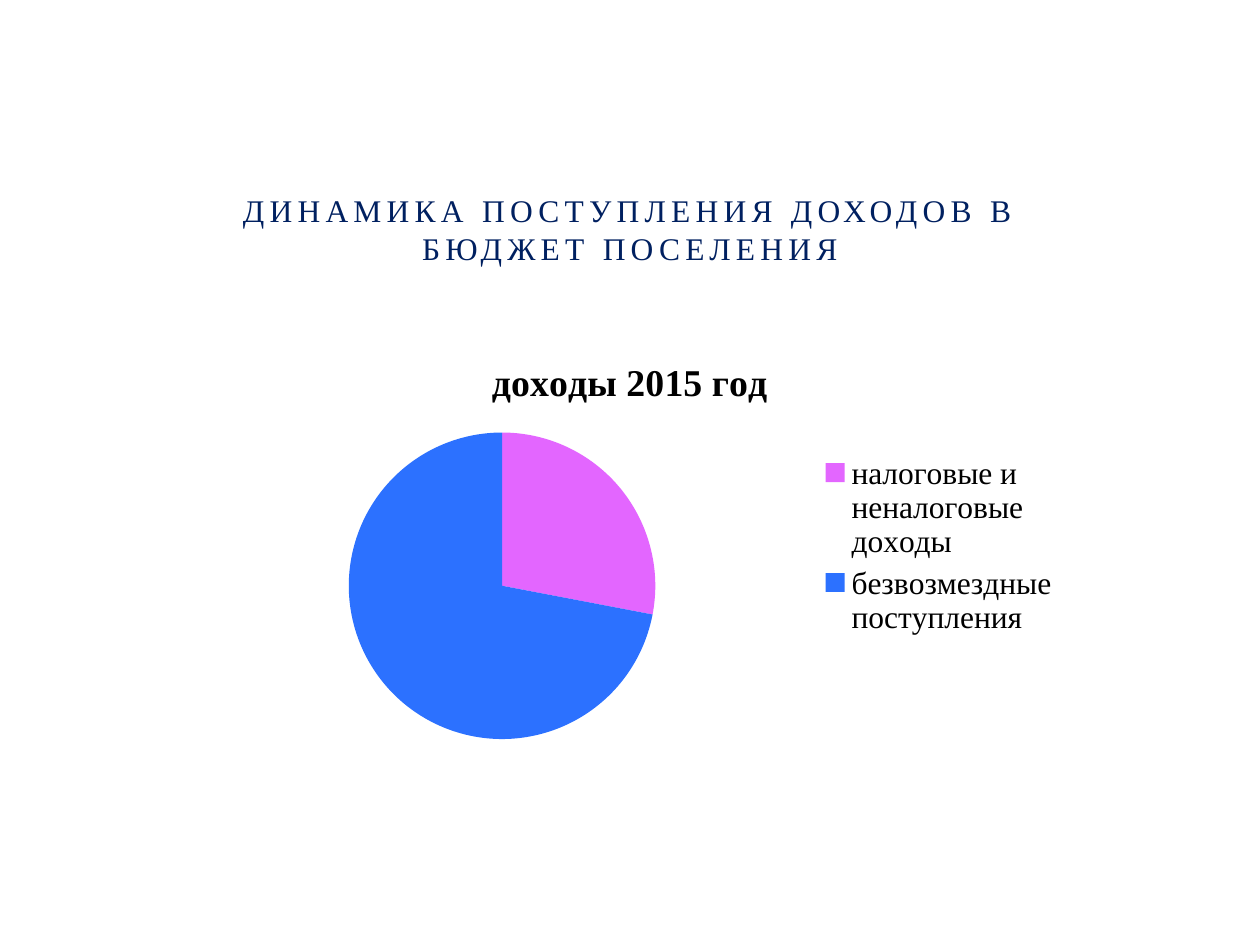
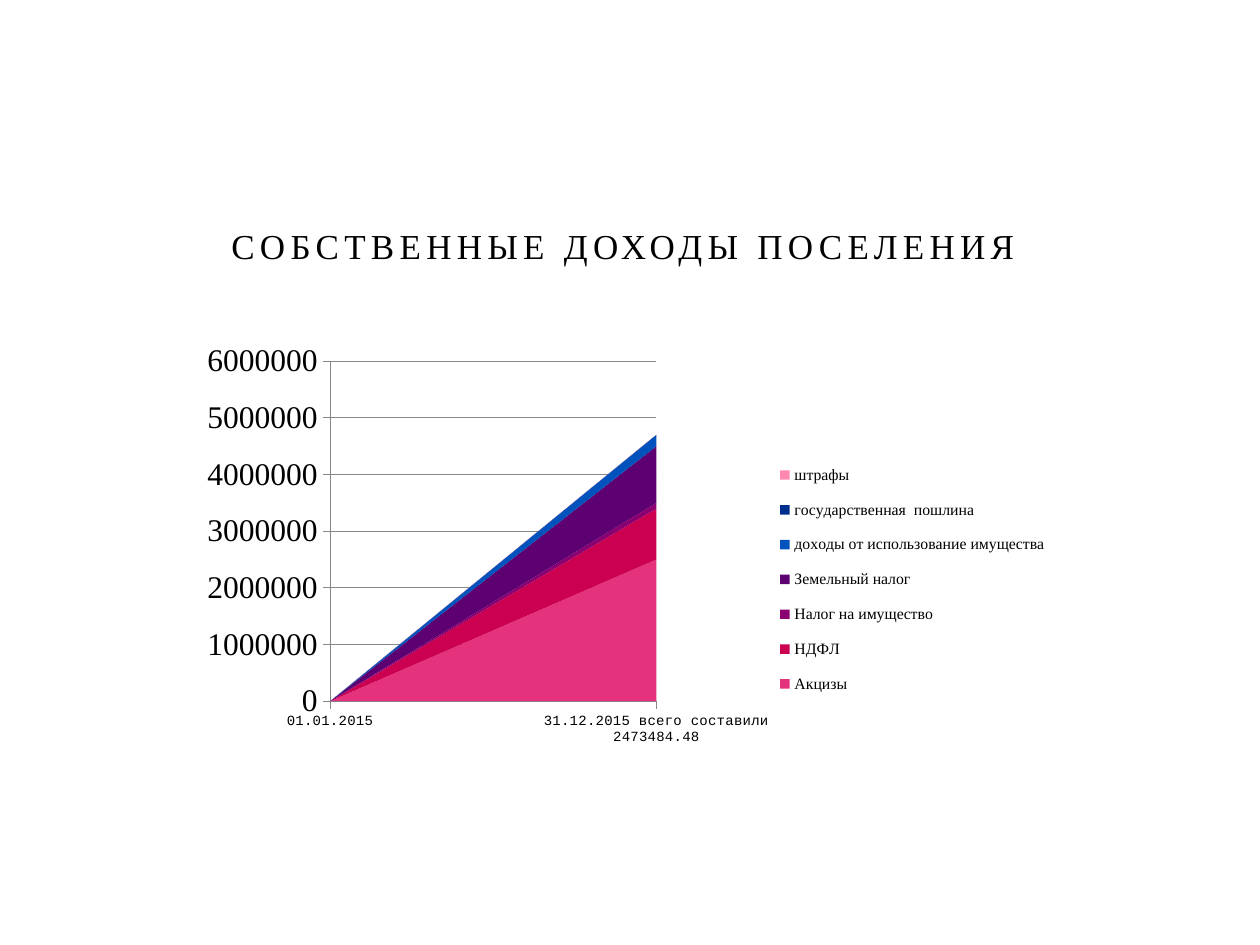
from dataclasses import dataclass

from lxml.etree import SubElement
from pptx import Presentation
from pptx.chart.chart import Chart
from pptx.chart.data import CategoryChartData
from pptx.dml.color import RGBColor
from pptx.enum.chart import XL_CHART_TYPE as ChartType
from pptx.enum.chart import XL_LEGEND_POSITION as LegendPosition
from pptx.enum.chart import XL_TICK_MARK as TickMark
from pptx.enum.text import MSO_ANCHOR as Anchor
from pptx.enum.text import MSO_AUTO_SIZE as AutoSize
from pptx.enum.text import PP_ALIGN as Align
from pptx.oxml import parse_xml
from pptx.oxml.ns import nsdecls, qn
from pptx.util import Inches, Pt

COLORS = {
    "navy": "002060", "black": "000000", "grid": "878787",
    "own": "E366FF", "grants": "2C71FF",
    "excise": "E4327C", "income": "CC0050", "property": "8B0071",
    "land": "5D0071", "rent": "0052BD", "duty": "00308E", "fines": "FF88B0",
}
SERIF, MONO = "Times New Roman", "Courier New"
WIDTH, HEIGHT = Inches(10), Inches(7.5)
ROWS = 90


@dataclass(frozen=True)
class Frame:
    """A rectangle in shares of the slide or of the chart."""
    left: float
    top: float
    width: float
    height: float


@dataclass(frozen=True)
class Income:
    name: str
    amount: int
    color: str


TITLE_FRAME = Frame(0.15, 17 / ROWS, 0.7, 9 / ROWS)
CHART_FRAME = Frame(0.15, 32 / ROWS, 0.7, 40 / ROWS)

SOURCES = [
    Income("налоговые и неналоговые доходы", 28, "own"),
    Income("безвозмездные поступления", 72, "grants"),
]
OWN_INCOME = [
    Income("Акцизы", 2500000, "excise"),
    Income("НДФЛ", 900000, "income"),
    Income("Налог на имущество", 100000, "property"),
    Income("Земельный налог", 1000000, "land"),
    Income("доходы от использование имущества", 200000, "rent"),
    Income("государственная  пошлина", 0, "duty"),
    Income("штрафы", 0, "fines"),
]


def rgb(name: str) -> RGBColor:
    return RGBColor.from_string(COLORS[name])


def set_font(font, size: float, color: str = "black", face: str = SERIF, bold: bool = False) -> None:
    font.size, font.name, font.bold = Pt(size), face, bold
    font.color.rgb = rgb(color)


def on_slide(frame: Frame) -> tuple[int, int, int, int]:
    return (int(frame.left * WIDTH), int(frame.top * HEIGHT),
            int(frame.width * WIDTH), int(frame.height * HEIGHT))


def add_titled_slide(deck, text: str, size: float, color: str):
    slide = deck.slides.add_slide(deck.slide_layouts[5])
    title = slide.shapes.title
    title.left, title.top, title.width, title.height = on_slide(TITLE_FRAME)
    frame = title.text_frame
    frame.text = text
    frame.word_wrap, frame.auto_size = True, AutoSize.NONE
    frame.vertical_anchor = Anchor.BOTTOM
    para = frame.paragraphs[0]
    para.alignment = Align.CENTER
    for span in para.runs:
        set_font(span.font, size, color)
        span._r.get_or_add_rPr().set("spc", "300")
    return slide


def place(parent, index: int, frame: Frame, inner: bool = False) -> None:
    """Give a chart part a manual layout in shares of the chart."""
    for old in parent.findall(qn("c:layout")):
        parent.remove(old)
    layout = parse_xml(f"<c:layout {nsdecls('c')}/>")
    manual = SubElement(layout, qn("c:manualLayout"))
    settings = [("layoutTarget", "inner")] if inner else []
    settings += [("xMode", "edge"), ("yMode", "edge"), ("x", frame.left),
                 ("y", frame.top), ("w", frame.width), ("h", frame.height)]
    for tag, value in settings:
        SubElement(manual, qn(f"c:{tag}")).set("val", str(value))
    parent.insert(index, layout)


def add_chart(slide, kind, data: CategoryChartData, plot: Frame, legend: Frame, legend_size: float) -> Chart:
    chart = slide.shapes.add_chart(kind, *on_slide(CHART_FRAME), data).chart
    set_font(chart.font, 18)
    chart.has_title = False
    chart.has_legend = True
    chart.legend.position = LegendPosition.RIGHT
    chart.legend.include_in_layout = False
    set_font(chart.legend.font, legend_size)
    place(chart.element.find(".//" + qn("c:plotArea")), 0, plot, inner=True)
    place(chart.element.find(".//" + qn("c:legend")), 1, legend)
    return chart


def paint(part, color: str) -> None:
    part.format.fill.solid()
    part.format.fill.fore_color.rgb = rgb(color)


def add_income_pie(deck) -> None:
    slide = add_titled_slide(
        deck, "ДИНАМИКА ПОСТУПЛЕНИЯ ДОХОДОВ В БЮДЖЕТ ПОСЕЛЕНИЯ", 18, "navy")
    heading = "доходы 2015 год"
    data = CategoryChartData(number_format="General")
    data.categories = [source.name for source in SOURCES]
    data.add_series(heading, [source.amount for source in SOURCES])
    chart = add_chart(slide, ChartType.PIE, data, Frame(0.18, 0.23, 0.35, 0.73),
                      Frame(0.71, 0.27, 0.28, 0.46), 18)
    chart.has_title = True
    chart.chart_title.text_frame.text = heading
    chart.chart_title.include_in_layout = False
    set_font(chart.chart_title.text_frame.paragraphs[0].runs[0].font, 21.6, bold=True)
    chart.plots[0].vary_by_categories = True
    for index, source in enumerate(SOURCES):
        paint(chart.series[0].points[index], source.color)


def add_own_income_area(deck) -> None:
    slide = add_titled_slide(deck, "СОБСТВЕННЫЕ ДОХОДЫ ПОСЕЛЕНИЯ ", 20, "black")
    data = CategoryChartData(number_format="General")
    data.categories = ["01.01.2015", "31.12.2015 всего составили 2473484.48"]
    for income in OWN_INCOME:
        data.add_series(income.name, [0, income.amount])
    chart = add_chart(slide, ChartType.AREA_STACKED, data, Frame(0.16, 0.06, 0.37, 0.81),
                      Frame(0.66, 0.27, 0.32, 0.62), 9)
    chart.plots[0].vary_by_categories = False
    for series, income in zip(chart.series, OWN_INCOME):
        paint(series, income.color)

    amounts, dates = chart.value_axis, chart.category_axis
    amounts.minimum_scale, amounts.maximum_scale, amounts.major_unit = 0, 6000000, 1000000
    amounts.has_major_gridlines, dates.has_major_gridlines = True, False
    for axis in (amounts, dates):
        axis.major_tick_mark, axis.minor_tick_mark = TickMark.OUTSIDE, TickMark.NONE
    for line in (amounts.format.line, dates.format.line, amounts.major_gridlines.format.line):
        line.color.rgb, line.width = rgb("grid"), Pt(0.5)
    set_font(amounts.tick_labels.font, 18)
    set_font(dates.tick_labels.font, 8, face=MONO)


def main() -> None:
    deck = Presentation()
    deck.slide_width, deck.slide_height = WIDTH, HEIGHT
    add_income_pie(deck)
    add_own_income_area(deck)
    deck.save("out.pptx")


if __name__ == "__main__":
    main()
